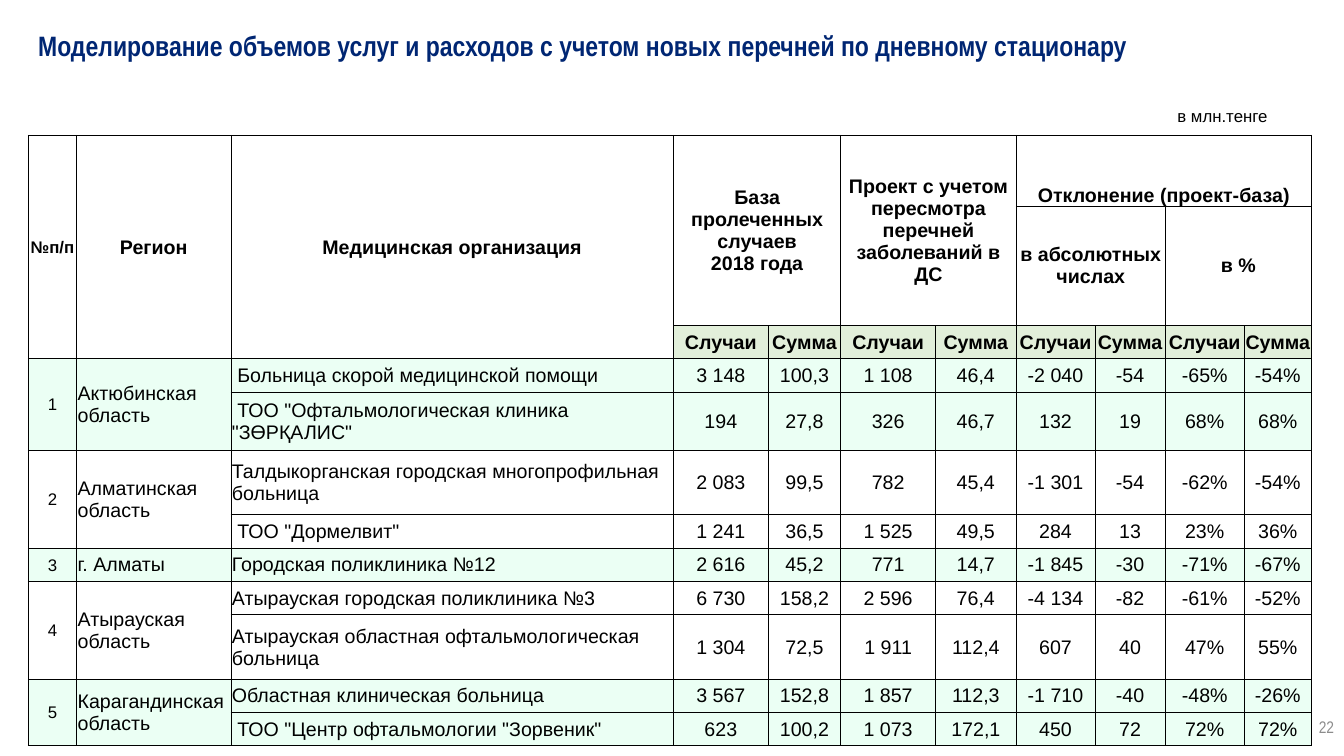
from lxml.etree import SubElement
from pptx import Presentation
from pptx.dml.color import RGBColor
from pptx.enum.text import MSO_ANCHOR as Anchor, PP_ALIGN as Align
from pptx.oxml.ns import qn
from pptx.util import Inches, Pt

TITLE = "Моделирование объемов услуг и расходов с учетом новых перечней по дневному стационару"
UNIT = "в млн.тенге"
PAGE = "22"

# row, column, rows spanned, columns spanned, text, format
HEADINGS = [
    (0, 0, 3, 1, "№п/п", {"size": 12}),
    (0, 1, 3, 1, "Регион", {}),
    (0, 2, 3, 1, "Медицинская организация", {}),
    (0, 3, 2, 2, "База пролеченных случаев\n2018 года", {}),
    (0, 5, 2, 2, "Проект с учетом пересмотра перечней заболеваний в ДС", {}),
    (0, 7, 1, 4, "Отклонение (проект-база)", {"anchor": Anchor.BOTTOM, "inset": 0}),
    (1, 7, 1, 2, "в абсолютных числах", {"inset": 0}),
    (1, 9, 1, 2, "в %", {"inset": 0}),
]
MEASURES = ["Случаи", "Сумма"]
REGIONS = [
    ("Актюбинская область", [
        (" Больница скорой медицинской помощи",
         ["3 148", "100,3", "1 108", "46,4", "-2 040", "-54", "-65%", "-54%"]),
        (' ТОО "Офтальмологическая клиника "ЗӨРҚАЛИС"',
         ["194", "27,8", "326", "46,7", "132", "19", "68%", "68%"]),
    ]),
    ("Алматинская область", [
        ("Талдыкорганская городская многопрофильная больница",
         ["2 083", "99,5", "782", "45,4", "-1 301", "-54", "-62%", "-54%"]),
        (' ТОО "Дормелвит"',
         ["1 241", "36,5", "1 525", "49,5", "284", "13", "23%", "36%"]),
    ]),
    ("г. Алматы", [
        ("Городская поликлиника №12",
         ["2 616", "45,2", "771", "14,7", "-1 845", "-30", "-71%", "-67%"]),
    ]),
    ("Атырауская область", [
        ("Атырауская городская поликлиника №3",
         ["6 730", "158,2", "2 596", "76,4", "-4 134", "-82", "-61%", "-52%"]),
        ("Атырауская областная офтальмологическая больница",
         ["1 304", "72,5", "1 911", "112,4", "607", "40", "47%", "55%"]),
    ]),
    ("Карагандинская область", [
        ("Областная клиническая больница",
         ["3 567", "152,8", "1 857", "112,3", "-1 710", "-40", "-48%", "-26%"]),
        (' ТОО "Центр офтальмологии "Зорвеник"',
         ["623", "100,2", "1 073", "172,1", "450", "72", "72%", "72%"]),
    ]),
]
COLUMN_WIDTHS = [0.48, 1.53, 4.39, 0.94, 0.72, 0.94, 0.8, 0.78, 0.7, 0.78, 0.67]
ROW_HEIGHTS = [0.71, 0.63, 0.33, 0.33, 0.58, 0.64, 0.33, 0.33, 0.33, 0.64, 0.33, 0.33]
MEASURE_ROW = 2
FIRST_FIGURE = 3

BLACK = RGBColor(0x00, 0x00, 0x00)
WHITE = RGBColor(0xFF, 0xFF, 0xFF)
NAVY = RGBColor(0x00, 0x26, 0x73)
GRAY = RGBColor(0x8C, 0x8C, 0x8C)
MEASURE_GREEN = RGBColor(0xE2, 0xEF, 0xDA)
REGION_GREEN = RGBColor(0xEB, 0xFF, 0xF4)


def write(frame, text, size=14, bold=False, color=BLACK, font="Arial",
          align=Align.LEFT, spacing=None):
    """Fill a text frame, one paragraph per line of text."""
    frame.word_wrap = True
    for index, line in enumerate(text.split("\n")):
        paragraph = frame.add_paragraph() if index else frame.paragraphs[0]
        paragraph.alignment = align
        if spacing:
            paragraph.line_spacing = spacing
        run = paragraph.add_run()
        run.text = line
        run.font.size = Pt(size)
        run.font.bold = bold
        run.font.name = font
        run.font.color.rgb = color


def add_label(slide, text, box, anchor=Anchor.MIDDLE, fill=None, **style):
    label = slide.shapes.add_textbox(*map(Inches, box))
    if fill is not None:
        label.fill.solid()
        label.fill.fore_color.rgb = fill
    label.text_frame.vertical_anchor = anchor
    write(label.text_frame, text, **style)


def fill_cell(cell, text, anchor=Anchor.MIDDLE, inset=0.01, align=Align.CENTER, **style):
    cell.vertical_anchor = anchor
    cell.margin_left = cell.margin_right = cell.margin_top = Inches(inset)
    cell.margin_bottom = 0
    write(cell.text_frame, text, align=align, **style)


def paint_cell(cell, color):
    """Give a cell thin black borders and a fill, or no fill when color is None."""
    properties = cell._tc.get_or_add_tcPr()
    for side in ("a:lnL", "a:lnR", "a:lnT", "a:lnB"):
        border = SubElement(properties, qn(side), w=str(Pt(0.5)))
        solid = SubElement(border, qn("a:solidFill"))
        SubElement(solid, qn("a:srgbClr"), val=str(BLACK))
    if color is None:
        cell.fill.background()
    else:
        cell.fill.solid()
        cell.fill.fore_color.rgb = color


def add_services_table(slide):
    rows, columns = len(ROW_HEIGHTS), len(COLUMN_WIDTHS)
    table = slide.shapes.add_table(
        rows, columns, Inches(0.28), Inches(1.34),
        Inches(sum(COLUMN_WIDTHS)), Inches(sum(ROW_HEIGHTS))).table
    table.first_row = table.horz_banding = False
    for column, width in zip(table.columns, COLUMN_WIDTHS):
        column.width = Inches(width)
    for row, height in zip(table.rows, ROW_HEIGHTS):
        row.height = Inches(height)

    for row, column, down, across, text, style in HEADINGS:
        heading = table.cell(row, column)
        heading.merge(table.cell(row + down - 1, column + across - 1))
        fill_cell(heading, text, bold=True, **style)
    for column in range(FIRST_FIGURE, columns):
        measure = MEASURES[(column - FIRST_FIGURE) % len(MEASURES)]
        fill_cell(table.cell(MEASURE_ROW, column), measure, bold=True)

    row_colors = [None] * (MEASURE_ROW + 1)
    for number, (region, clinics) in enumerate(REGIONS, 1):
        top = len(row_colors)
        for column in (0, 1):
            if len(clinics) > 1:
                table.cell(top, column).merge(table.cell(top + len(clinics) - 1, column))
        fill_cell(table.cell(top, 0), str(number), size=12)
        fill_cell(table.cell(top, 1), region, align=Align.LEFT)
        for row, (clinic, figures) in enumerate(clinics, top):
            fill_cell(table.cell(row, 2), clinic, align=Align.LEFT)
            for column, figure in enumerate(figures, FIRST_FIGURE):
                fill_cell(table.cell(row, column), figure)
            row_colors.append(REGION_GREEN if number % 2 else None)

    for row, color in enumerate(row_colors):
        for column in range(columns):
            is_measure = row == MEASURE_ROW and column >= FIRST_FIGURE
            paint_cell(table.cell(row, column), MEASURE_GREEN if is_measure else color)


def main():
    deck = Presentation()
    deck.slide_width, deck.slide_height = Inches(13.33), Inches(7.5)
    slide = deck.slides.add_slide(deck.slide_layouts[6])
    add_label(slide, UNIT, (11.58, 1, 1.9, 0.3), anchor=Anchor.TOP, fill=WHITE, size=12)
    add_label(slide, PAGE, (10.33, 7.01, 3, 0.4), size=12, color=GRAY,
              font="Arial Narrow", align=Align.RIGHT)
    add_label(slide, TITLE, (0.28, 0.28, 12.08, 0.39), size=20, bold=True,
              color=NAVY, font="Arial Narrow", spacing=0.9)
    add_services_table(slide)
    deck.save("out.pptx")


if __name__ == "__main__":
    main()
